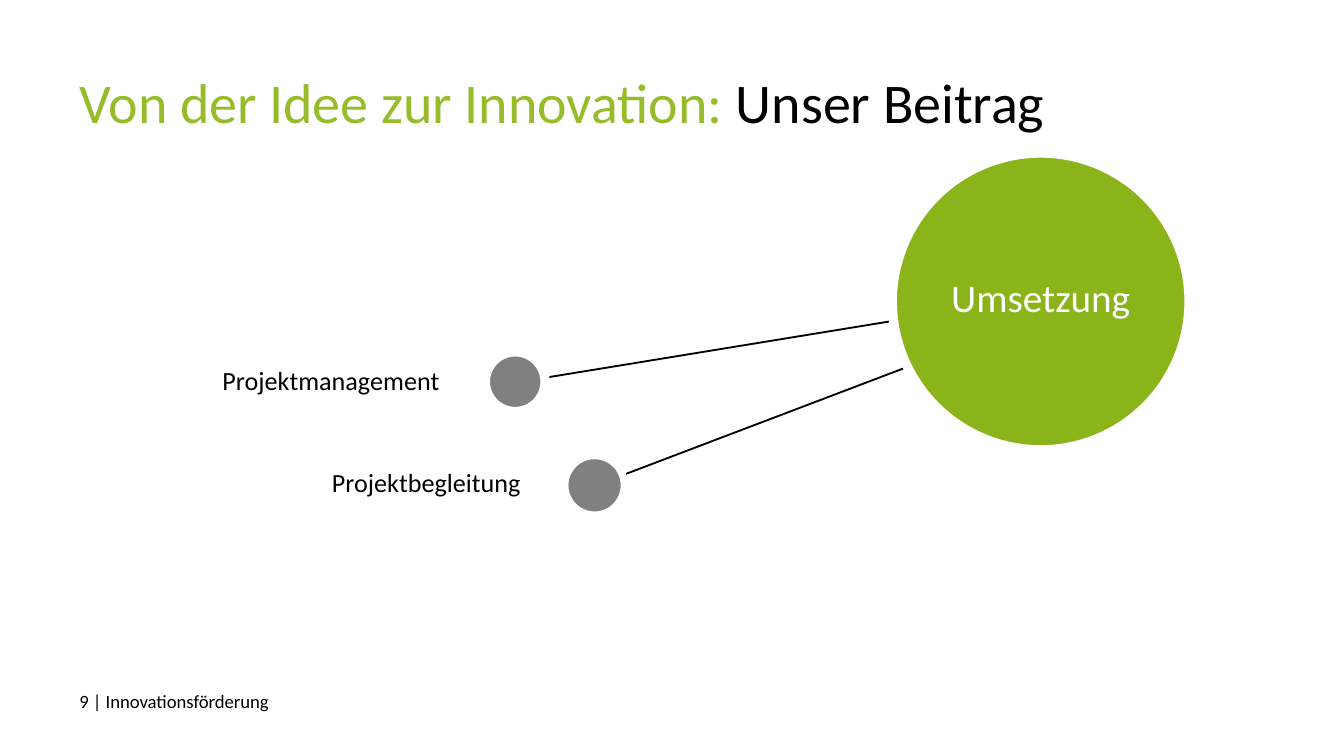
from pptx import Presentation
from pptx.dml.color import RGBColor
from pptx.enum.shapes import MSO_CONNECTOR as CONN, MSO_SHAPE as SHAPE
from pptx.enum.text import MSO_ANCHOR as ANCHOR, PP_ALIGN as ALIGN
from pptx.oxml.ns import qn
from pptx.util import Pt
from lxml.etree import SubElement

BLACK = RGBColor(0x00, 0x00, 0x00)
WHITE = RGBColor(0xFF, 0xFF, 0xFF)
GRAY = RGBColor(0x80, 0x80, 0x80)
GREEN = RGBColor(0x8A, 0xB4, 0x19)
TITLE_GREEN = RGBColor(0x97, 0xBC, 0x29)

LABEL = {"align": ALIGN.RIGHT, "anchor": ANCHOR.MIDDLE, "inset": (17, 8.5)}


def add_text(s, box, runs, size, align=ALIGN.LEFT, anchor=ANCHOR.TOP, inset=(6.5, 3)):
    """Add a text box with one paragraph of (text, colour) runs."""
    tf = s.shapes.add_textbox(*map(Pt, box)).text_frame
    dx, dy = map(Pt, inset)
    frame = {"word_wrap": True, "vertical_anchor": anchor, "margin_left": dx,
             "margin_right": dx, "margin_top": dy, "margin_bottom": dy}
    for name, value in frame.items():
        setattr(tf, name, value)
    p = tf.paragraphs[0]
    p.alignment = align
    for text, color in runs:
        r = p.add_run()
        r.text = text
        for name, value in {"name": "Calibri", "size": Pt(size)}.items():
            setattr(r.font, name, value)
        r.font.color.rgb = color


def add_circle(s, left, top, diameter, fill, border):
    """Add a filled circle with a white border."""
    sp = s.shapes.add_shape(SHAPE.OVAL, *map(Pt, (left, top, diameter, diameter)))
    sp.shadow.inherit = False
    sp.fill.solid()
    sp.fill.fore_color.rgb = fill
    sp.line.color.rgb = WHITE
    sp.line.width = Pt(border)


def add_line(s, start, end):
    """Add a thin black line without shadow."""
    line = s.shapes.add_connector(CONN.STRAIGHT, *map(Pt, start + end))
    line.line.color.rgb = BLACK
    line.line.width = Pt(1)
    SubElement(line._element.spPr, qn("a:effectLst"))


def add_branch(s, text, label_box, dot, border, start, end):
    """Add a labelled dot with its line to the main circle."""
    add_line(s, start, end)
    add_text(s, label_box, [(text, BLACK)], 14, **LABEL)
    add_circle(s, *dot, 32, GRAY, border)


def main():
    """Build and save the slide."""
    prs = Presentation()
    prs.slide_width, prs.slide_height = Pt(720), Pt(405)
    s = prs.slides.add_slide(prs.slide_layouts[6])
    add_text(s, (36, 366.5, 648, 68 - 30), [("9 | Innovationsförderung", BLACK)], 10)
    add_text(s, (36, 33, 648, 68),
             [("Von der Idee zur Innovation:", TITLE_GREEN), (" Unser Beitrag", BLACK)], 30)
    add_branch(s, "Projektmanagement", (70.5, 186.5, 182, 34), (260, 188.5), 5,
               (551.5, 160), (276, 205))
    add_branch(s, "Projektbegleitung", (133, 241.5, 163, 34), (302.5, 244), 4,
               (560, 168.5), (318, 260.5))
    add_circle(s, 478, 82, 159, GREEN, 5)
    add_text(s, (482, 143.5, 151, 40), [("Umsetzung", WHITE)], 21, align=ALIGN.CENTER)
    prs.save("out.pptx")


if __name__ == "__main__":
    main()
